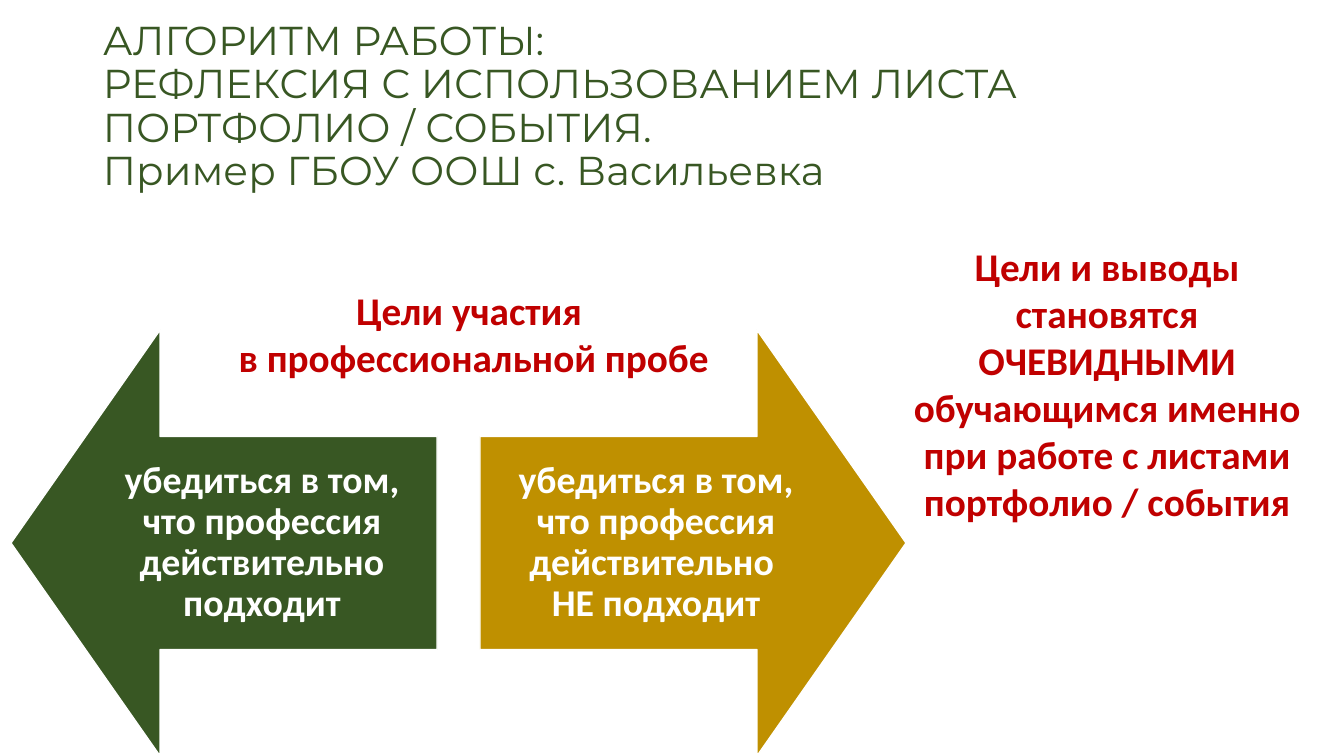
from pptx import Presentation
from pptx import util as u
from pptx.dml.color import RGBColor
from pptx.enum import shapes, text

EMU_PER_PX = 914400 / 100.8
GREEN, GOLD, RED, WHITE = "385723", "BF9000", "C00000", "FFFFFF"


def px(n):
    return u.Emu(round(n * EMU_PER_PX))


def color(hex_code):
    return RGBColor.from_string(hex_code)


def add_text(s, box, words, size, hex_code, font="Calibri", bold=True,
             align=text.PP_ALIGN.CENTER, anchor=text.MSO_ANCHOR.TOP,
             spacing=1.0, inset=None):
    """Add a wrapped one-paragraph text box; a vertical tab breaks the line."""
    tf = s.shapes.add_textbox(*map(px, box)).text_frame
    tf.word_wrap = True
    tf.vertical_anchor = anchor
    if inset is not None:
        tf.margin_left = tf.margin_right = px(inset)
        tf.margin_top = tf.margin_bottom = px(inset)
    p = tf.paragraphs[0]
    p.text = words
    p.alignment = align
    p.line_spacing = spacing
    for r in p.runs:
        r.font.name = font
        r.font.size = u.Pt(size)
        r.font.bold = bold
        r.font.color.rgb = color(hex_code)


def add_goal_arrow(s, left, rotation, hex_code, text_left, words):
    """Add a sideways block arrow with its label over the shaft."""
    top, side = 330, 426
    sp = s.shapes.add_shape(shapes.MSO_SHAPE.UP_ARROW,
                            px(left), px(top), px(side), px(side))
    sp.rotation = rotation
    sp.adjustments[0] = 0.5
    sp.adjustments[1] = 0.35
    sp.shadow.inherit = False
    sp.fill.solid()
    sp.fill.fore_color.rgb = color(hex_code)
    sp.line.color.rgb = color(WHITE)
    sp.line.width = u.Pt(1)
    add_text(s, (text_left, top + side // 4, 352, side // 2), words, 27, WHITE,
             anchor=text.MSO_ANCHOR.MIDDLE, spacing=0.9, inset=21)


def main():
    prs = Presentation()
    prs.slide_width, prs.slide_height = px(1344), px(756)
    s = prs.slides.add_slide(prs.slide_layouts[6])

    add_text(s, (93, 70, 1159, 75),
             "АЛГОРИТМ РАБОТЫ: \vРЕФЛЕКСИЯ С ИСПОЛЬЗОВАНИЕМ ЛИСТА "
             "ПОРТФОЛИО / СОБЫТИЯ. \vПример ГБОУ ООШ с. Васильевка",
             28.8, GREEN, font="Montserrat", bold=False,
             align=text.PP_ALIGN.LEFT, anchor=text.MSO_ANCHOR.MIDDLE,
             spacing=0.9)
    add_goal_arrow(s, 11, 270, GREEN, 86,
                   "убедиться в том, что профессия действительно подходит")
    add_goal_arrow(s, 480, 90, GOLD, 480,
                   "убедиться в том, что профессия действительно \vНЕ подходит")
    add_text(s, (212, 281, 523, 105),
             "Цели участия \vв профессиональной пробе", 28, RED)
    add_text(s, (894, 237, 426, 295),
             "Цели и выводы становятся ОЧЕВИДНЫМИ обучающимся именно "
             "при работе с листами портфолио / события", 28, RED)
    prs.save("out.pptx")


if __name__ == "__main__":
    main()
